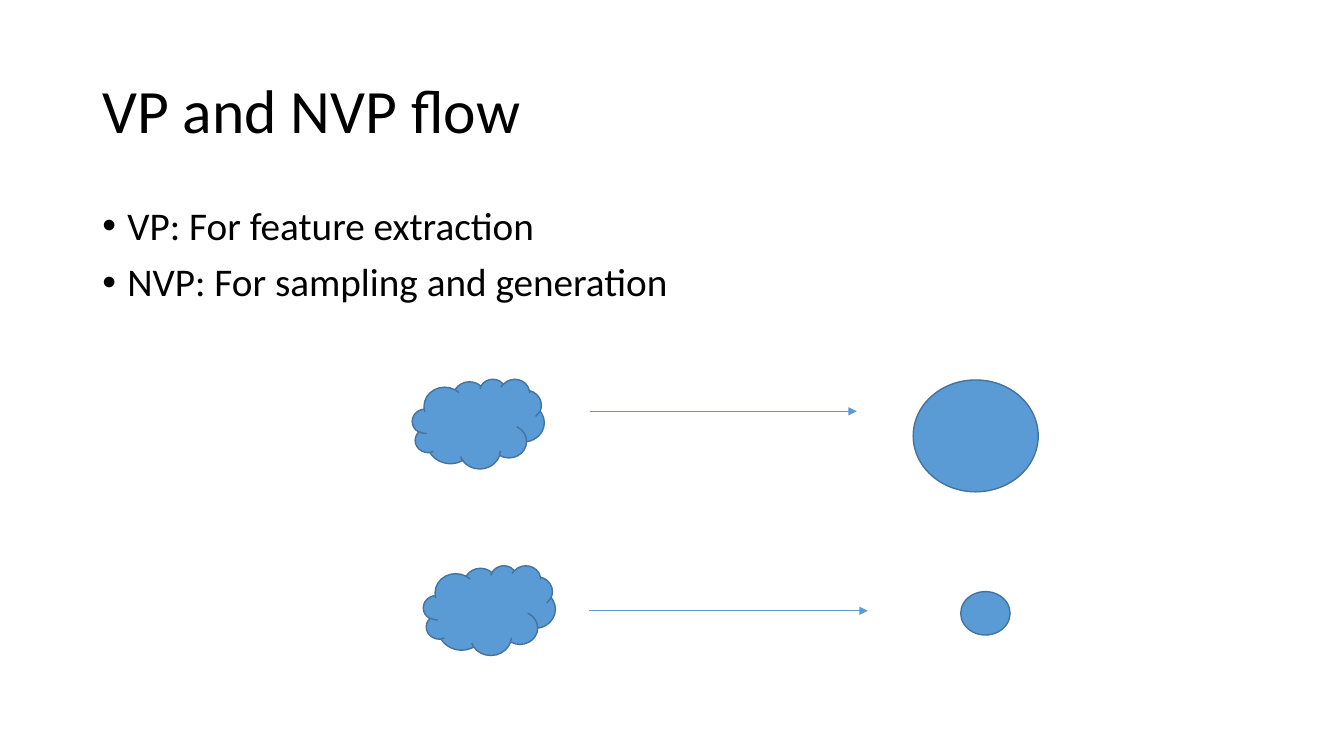
import pptx
import pptx.util
import pptx.dml.color
import pptx.enum.shapes
import pptx.enum.text
import pptx.oxml
import pptx.oxml.ns

Pt = pptx.util.Pt
RGBColor = pptx.dml.color.RGBColor
SHAPES = pptx.enum.shapes.MSO_SHAPE
ANCHOR = pptx.enum.text.MSO_ANCHOR

BLACK = RGBColor(0x00, 0x00, 0x00)
BLUE = RGBColor(0x5B, 0x9B, 0xD5)
DARK_BLUE = RGBColor(0x43, 0x73, 0x9E)
FONT = "Calibri"
NAMESPACE = pptx.oxml.ns.nsdecls("a")

CLOUD_SIZE = (94.3, 64.1)
BULLET_INDENT = 18


def add_text(slide, box, lines, size, anchor):
    frame = slide.shapes.add_textbox(*map(Pt, box)).text_frame
    frame.word_wrap = True
    frame.vertical_anchor = anchor
    frame.text = "\n".join(lines)
    for paragraph in frame.paragraphs:
        paragraph.line_spacing = 0.9
        font = paragraph.runs[0].font
        font.name, font.size = FONT, Pt(size)
        font.color.rgb = BLACK
    return frame


def add_bullets(slide, box, lines):
    for paragraph in add_text(slide, box, lines, 28, ANCHOR.TOP).paragraphs:
        paragraph.space_before = Pt(10)
        properties = paragraph._p.get_or_add_pPr()
        properties.set("marL", str(Pt(BULLET_INDENT)))
        properties.set("indent", str(-Pt(BULLET_INDENT)))
        for bullet in ('<a:buFont %s typeface="Arial"/>', '<a:buChar %s char="•"/>'):
            properties.append(pptx.oxml.parse_xml(bullet % NAMESPACE))


def add_blob(slide, kind, left, top, width, height):
    blob = slide.shapes.add_shape(kind, Pt(left), Pt(top), Pt(width), Pt(height))
    blob.shadow.inherit = False
    blob.fill.solid()
    blob.fill.fore_color.rgb = BLUE
    blob.line.color.rgb = DARK_BLUE
    blob.line.width = Pt(1)


def add_arrow(slide, left, top, length):
    arrow = slide.shapes.add_connector(
        pptx.enum.shapes.MSO_CONNECTOR.STRAIGHT,
        Pt(left), Pt(top), Pt(left + length), Pt(top))
    arrow.line.color.rgb = BLUE
    arrow.line.width = Pt(0.5)
    arrow.line._get_or_add_ln().append(
        pptx.oxml.parse_xml('<a:tailEnd %s type="triangle"/>' % NAMESPACE))
    arrow._element.spPr.append(pptx.oxml.parse_xml("<a:effectLst %s/>" % NAMESPACE))


def add_flow(slide, left, top, arrow, circle):
    """Cloud at left, top; arrow (x, y, length) and circle (x, y, w, h) are offset from it."""
    add_blob(slide, SHAPES.CLOUD, left, top, *CLOUD_SIZE)
    arrow_x, arrow_y, length = arrow
    add_arrow(slide, left + arrow_x, top + arrow_y, length)
    circle_x, circle_y, width, height = circle
    add_blob(slide, SHAPES.OVAL, left + circle_x, top + circle_y, width, height)


def main():
    deck = pptx.Presentation()
    deck.slide_width, deck.slide_height = Pt(960), Pt(540)
    slide = deck.slides.add_slide(deck.slide_layouts[6])
    add_text(slide, (66, 28.8, 828, 104.4), ["VP and NVP flow"], 44, ANCHOR.MIDDLE)
    add_bullets(slide, (66, 144, 828, 342.7),
                ["VP: For feature extraction", "NVP: For sampling and generation"])
    add_flow(slide, 294.5, 270.7, (126.7, 23.1, 190.8), (357.8, 0.7, 89.3, 79.9))
    add_flow(slide, 302.4, 403.9, (118.1, 32.4, 199.4), (383.8, 18.7, 35.3, 31))
    deck.save("out.pptx")


if __name__ == "__main__":
    main()
